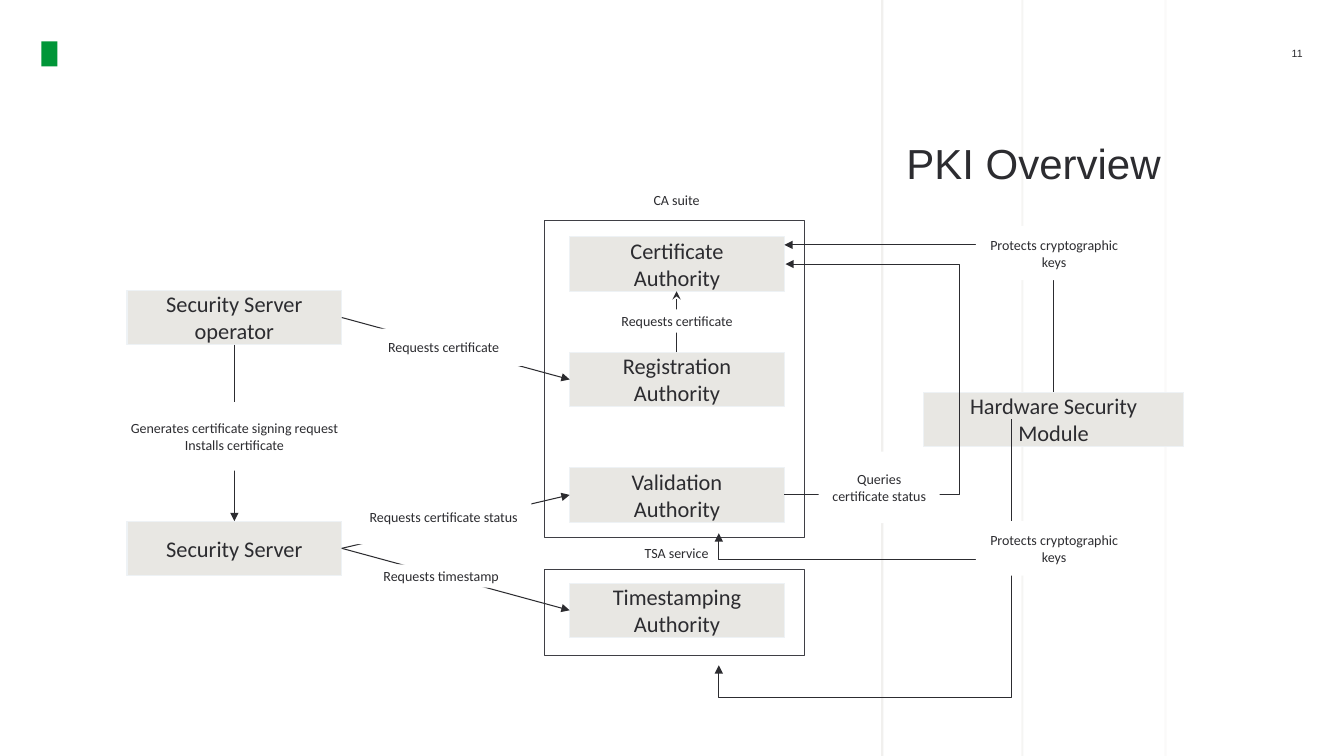
from dataclasses import dataclass

from lxml import etree
from pptx import Presentation
from pptx import util as u
from pptx.dml.color import RGBColor
from pptx.enum import shapes, text
from pptx.oxml.ns import qn


@dataclass(frozen=True)
class Theme:
    ink: str = "2C2C30"
    frame: str = "3F3F45"
    stone: str = "E8E7E3"
    edge: str = "EEF2F5"
    paper: str = "FFFFFF"
    mark: str = "009638"
    heading: str = "Arial"
    body: str = "Calibri"
    title: float = 30
    box: float = 16
    label: float = 10
    number: float = 7.5
    thin: float = 0.75
    guide: float = 1.5


THEME = Theme()
COLS, ROWS = 13.33, 7.5  # page grid, one inch per cell
BOX_W, BOX_H = 2.13, 0.54
WIDE_W = 2.58
SERVER_X, AUTHORITY_X, FRAME_X, HSM_X = 1.26, 5.65, 5.4, 9.16
AUTHORITY_RIGHT = AUTHORITY_X + BOX_W
SERVER_RIGHT = SERVER_X + BOX_W
AUTHORITIES = ["Certificate", "Registration", "Validation", "Timestamping"]


def cells(*counts):
    return [u.Inches(count) for count in counts]


def authority_top(row):
    return 2.35 + 1.145 * row


def box_middle(row):
    return authority_top(row) + BOX_H / 2


def write(shape, wording, size, font=THEME.body, align=text.PP_ALIGN.CENTER,
          anchor=text.MSO_ANCHOR.MIDDLE, inset=0.1):
    frame = shape.text_frame
    margin = u.Inches(inset)
    layout = {"word_wrap": True, "vertical_anchor": anchor,
              "margin_left": margin, "margin_right": margin,
              "margin_top": margin, "margin_bottom": margin}
    for name, value in layout.items():
        setattr(frame, name, value)
    for index, line in enumerate(wording.split("\n")):
        paragraph = frame.add_paragraph() if index else frame.paragraphs[0]
        paragraph.alignment = align
        run = paragraph.add_run()
        run.text = line
        for name, value in {"size": u.Pt(size), "name": font}.items():
            setattr(run.font, name, value)
        run.font.color.rgb = RGBColor.from_string(THEME.ink)


def panel(parent, x, y, w, h, fill=None, line=None):
    shape = parent.add_shape(shapes.MSO_SHAPE.RECTANGLE, *cells(x, y, w, h))
    shape.shadow.inherit = False
    if fill:
        shape.fill.solid()
        shape.fill.fore_color.rgb = RGBColor.from_string(fill)
    else:
        shape.fill.background()
    if line:
        shape.line.color.rgb = RGBColor.from_string(line)
        shape.line.width = u.Pt(THEME.thin)
    else:
        shape.line.fill.background()
    return shape


def box(parent, wording, x, y, w=BOX_W):
    write(panel(parent, x, y, w, BOX_H, THEME.stone, THEME.edge), wording, THEME.box)


def label(parent, wording, x, y, w, h, fill=THEME.paper):
    write(panel(parent, x, y, w, h, fill), wording, THEME.label)


def caption(parent, wording, x, y, w, h, **style):
    write(parent.add_textbox(*cells(x, y, w, h)), wording, **style)


def link(parent, start, end, kind=shapes.MSO_CONNECTOR.STRAIGHT,
         color=THEME.ink, width=THEME.thin, head=None, tail=None):
    connector = parent.add_connector(kind, *cells(*start, *end))
    connector.line.color.rgb = RGBColor.from_string(color)
    connector.line.width = u.Pt(width)
    outline = connector.line._get_or_add_ln()
    for tag, arrow in (("a:headEnd", head), ("a:tailEnd", tail)):
        if arrow:
            etree.SubElement(outline, qn(tag), type=arrow)
    etree.SubElement(connector._element.spPr, qn("a:effectLst"))
    return connector


def bend(connector, preset, share=None):
    """Choose the elbow's preset and where its middle leg lies, as a share of its width."""
    geometry = connector._element.spPr.find(qn("a:prstGeom"))
    geometry.set("prst", preset)
    if share is not None:
        guides = geometry.get_or_add_avLst()
        etree.SubElement(guides, qn("a:gd"), name="adj1",
                         fmla=f"val {round(share * 100000)}")


def key_link(parent, left, right, top, bottom, drop):
    """Elbow that dips below its arrowhead at the lower left and rises at the right."""
    wide, tall = right - left, bottom - top
    x, y = (left + right - tall) / 2, (top + bottom - wide) / 2
    connector = link(parent, (x, y), (x + tall, y + wide),
                     shapes.MSO_CONNECTOR.ELBOW, head="triangle")
    connector._element.spPr.find(qn("a:xfrm")).set("rot", str(270 * 60000))
    bend(connector, "bentConnector3", -drop / tall)


def page_furniture(page):
    panel(page, 0.41, 0.41, 0.16, 0.25, THEME.mark)
    for x, opacity in ((8.75, 60), (10.14, 40), (11.56, 20)):
        guide = link(page, (x, 0), (x, ROWS), color=THEME.stone, width=THEME.guide)
        shade = guide._element.spPr.find(".//" + qn("a:srgbClr"))
        etree.SubElement(shade, qn("a:alpha"), val=str(opacity * 1000))
    panel(page, 0.68, 0.72, 7.95, 6.1, THEME.paper)
    caption(page, "PKI Overview", 8.99, 1.36, 3.9, 1.52, size=THEME.title,
            font=THEME.heading, align=text.PP_ALIGN.LEFT,
            anchor=text.MSO_ANCHOR.TOP, inset=0)
    caption(page, "11", 12.53, 0.41, 0.39, 0.24, size=THEME.number,
            font=THEME.heading, align=text.PP_ALIGN.RIGHT, inset=0)


def servers_and_authorities(diagram):
    for y, h in ((5.65, 0.85), (2.19, 3.14)):
        panel(diagram, FRAME_X, y, WIDE_W, h, line=THEME.frame)
    for row, role in enumerate(AUTHORITIES):
        box(diagram, f"{role}\nAuthority", AUTHORITY_X, authority_top(row))
    box(diagram, "Security Server", SERVER_X, 5.17)
    box(diagram, "Security Server operator", SERVER_X, 2.88)


def requests(diagram):
    server_middle = SERVER_X + BOX_W / 2
    link(diagram, (server_middle, 3.42), (server_middle, 5.17), tail="triangle")
    label(diagram, "Generates certificate signing request\nInstalls certificate",
          0.44, 3.99, 3.77, 0.68)
    for start_y, row in ((3.15, 1), (5.44, 2), (5.44, 3)):
        link(diagram, (SERVER_RIGHT, start_y), (AUTHORITY_X, box_middle(row)),
             tail="triangle")
    link(diagram, (6.71, authority_top(1)), (6.71, authority_top(0) + BOX_H),
         tail="stealth")
    for wording, *place in (
            ("Requests certificate", AUTHORITY_X, 3.07, BOX_W, 0.23),
            ("Requests certificate", 3.46, 3.26, 1.88, 0.37),
            ("Requests certificate status", 3.53, 4.86, 1.74, 0.54),
            ("Requests timestamp", 3.46, 5.6, 1.83, 0.23)):
        label(diagram, wording, *place)
    for suite, y, h in (("CA suite", 1.82, 0.32), ("TSA service", 5.37, 0.23)):
        caption(diagram, suite, 5.77, y, 1.88, h, size=THEME.label)


def key_protection(diagram):
    box(diagram, "Hardware Security Module", HSM_X, 3.89, WIDE_W)
    key_link(diagram, 7.13, 10.03, 4.16, 6.6, 0.32)
    protects = link(diagram, (AUTHORITY_RIGHT, 2.43), (10.45, 3.89),
                    shapes.MSO_CONNECTOR.ELBOW, head="triangle")
    bend(protects, "bentConnector2")
    key_link(diagram, 7.13, 10.03, 4.31, 5.29, 0.26)
    sliver = 0.01
    queries = link(diagram, (AUTHORITY_RIGHT, box_middle(2)),
                   (AUTHORITY_RIGHT + sliver, box_middle(0)),
                   shapes.MSO_CONNECTOR.ELBOW, tail="triangle")
    bend(queries, "bentConnector3", 1.76 / sliver)
    label(diagram, "Queries certificate status", 8.12, 4.48, 1.2, 0.71)
    for y in (5.17, 2.24):
        label(diagram, "Protects cryptographic keys", 9.68, y, 1.55, BOX_H)


def main():
    deck = Presentation()
    deck.slide_width, deck.slide_height = cells(COLS, ROWS)
    page = deck.slides.add_slide(deck.slide_layouts[6]).shapes
    page_furniture(page)
    diagram = page.add_group_shape().shapes
    for section in (servers_and_authorities, requests, key_protection):
        section(diagram)
    deck.save("out.pptx")


if __name__ == "__main__":
    main()
